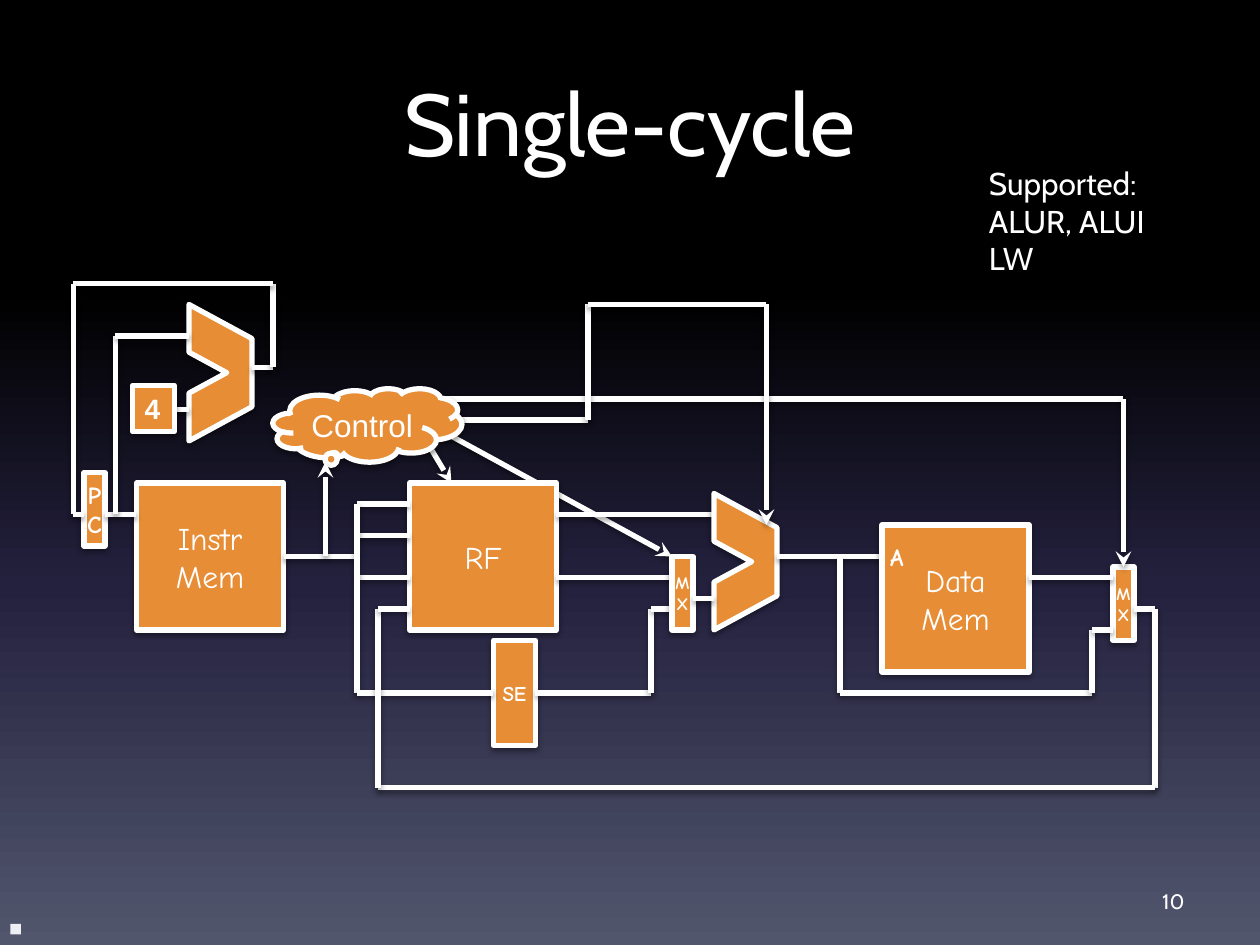
from copy import deepcopy

from pptx import Presentation, dml, oxml, util as u
from pptx.dml import color
from pptx.enum import shapes as es, text as et
from pptx.oxml import ns

WHITE, ORANGE = "FFFFFF", "E78D35"
COMIC, CABIN = "Comic Neue", "Cabin"
LEFT, MID, RIGHT = et.PP_ALIGN.LEFT, et.PP_ALIGN.CENTER, et.PP_ALIGN.RIGHT
RECT = es.MSO_SHAPE.RECTANGLE
SHADE = (
    f'<a:effectLst {ns.nsdecls("a")}><a:outerShdw blurRad="39370" dist="20320" '
    'dir="5400000" rotWithShape="0"><a:srgbClr val="000000"><a:alpha val="38000"/>'
    "</a:srgbClr></a:outerShdw></a:effectLst>"
)
ARROW = f'<a:tailEnd {ns.nsdecls("a")} type="stealth"/>'


def tint(code):
    """Turn a hex string into a colour."""
    return color.RGBColor.from_string(code)


def unit(count):
    """Turn grid steps, twelve to the inch, into a length."""
    return u.Cm(count * 2.54 / 12)


def place(box, x, y, w, h):
    """Give the lengths of a part set relative to the box."""
    return [unit(n) for n in (box[0] + x, box[1] + y, w, h)]


def edge(item):
    """Give a part the white outline and the soft shadow."""
    item.line.color.rgb = tint(WHITE)
    item.line.width = u.Pt(3)
    item._element.spPr.append(oxml.parse_xml(SHADE))


def write(item, words, size, face, align=MID, bold=False, anchor=et.MSO_ANCHOR.MIDDLE, wrap=False):
    """Put formatted words into a shape."""
    frame = item.text_frame
    frame.text = words
    frame.word_wrap = wrap
    frame.vertical_anchor = anchor
    for para in frame.paragraphs:
        para.alignment = align
        font = para.font
        font.size, font.name, font.bold = u.Pt(size), face, bold
        font.color.rgb = tint(WHITE)


def block(slide, box, spot, words, size=18, kind=RECT, **style):
    """Draw an orange labelled block."""
    item = slide.shapes.add_shape(kind, *place(box, *spot))
    item.fill.solid()
    item.fill.fore_color.rgb = tint(ORANGE)
    edge(item)
    write(item, words, size, **{"face": COMIC, **style})
    return item


def label(slide, box, spot, words, size, face=CABIN, **style):
    """Add a free text label."""
    item = slide.shapes.add_textbox(*place(box, *spot))
    write(item, words, size, face, **style)


def wire(slide, box, points, arrow=False, start=None, stop=None):
    """Draw a run of straight connectors, joined to blocks where given."""
    links = []
    for a, b in zip(points, points[1:]):
        ends = [unit(p[i] + box[i]) for p in (a, b) for i in (0, 1)]
        link = slide.shapes.add_connector(es.MSO_CONNECTOR.STRAIGHT, *ends)
        edge(link)
        links.append(link)
    if start:
        links[0].begin_connect(*start)
    if stop:
        links[-1].end_connect(*stop)
    if arrow:
        links[-1]._element.spPr.find(ns.qn("a:ln")).append(oxml.parse_xml(ARROW))


def alu(slide, box, x, y):
    """Draw a notched adder outline."""
    dots = [(0, 13), (6, 9.75), (6, 3.25), (0, 0), (0, 4.55), (3.6, 6.5), (0, 8.45)]
    spots = [(unit(box[0] + x + a), unit(box[1] + y + b)) for a, b in dots]
    pen = slide.shapes.build_freeform(*spots[0])
    pen.add_line_segments(spots[1:])
    item = pen.convert_to_shape()
    item.fill.solid()
    item.fill.fore_color.rgb = tint(ORANGE)
    edge(item)


def back(slide):
    """Paint the night sky gradient."""
    fill = slide.background.fill
    fill.gradient()
    fill.gradient_angle = 270
    rows = slide._element.find(".//" + ns.qn("a:gsLst"))
    for _ in range(2):
        rows.append(deepcopy(rows[0]))
    tones = [(0, "000000"), (0.31, "000000"), (0.62, "24213E"), (1, "51566D")]
    for stop, (pos, code) in zip(fill.gradient_stops, tones):
        stop.position = pos
        stop.color.rgb = tint(code)


def head(slide, box):
    """Set the title and the list of supported instructions."""
    item = slide.shapes.title
    item.left, item.top, item.width, item.height = place(box, 0, 0, 108, 15)
    write(item, "Single-cycle", 50, CABIN, anchor=et.MSO_ANCHOR.TOP, wrap=True)
    item.text_frame.auto_size = et.MSO_AUTO_SIZE.NONE
    label(slide, box, (87, 9, 18.7, 12.1), "Supported:\nALUR, ALUI\vLW", 18,
          align=LEFT, anchor=et.MSO_ANCHOR.TOP)


def control(slide, box):
    """Draw the control cloud and its outgoing signals."""
    wire(slide, box, [(16, 1), (81, 1)])
    wire(slide, box, [(15, 3), (30, 3)])
    wire(slide, box, [(16, 4), (38, 16)], arrow=True)
    wire(slide, box, [(14, 4), (17, 9)], arrow=True)
    cloud = block(slide, box, (0, 0, 18, 7), "Control", kind=es.MSO_SHAPE.CLOUD_CALLOUT,
                  face="Arial", align=LEFT, anchor=et.MSO_ANCHOR.TOP)
    cloud.adjustments[0], cloud.adjustments[1] = -0.177, 0.426


def fetch(slide, box):
    """Draw the program counter, its adder and the instruction memory."""
    mem = block(slide, box, (6, 19, 14, 14), "Instr\nMem")
    block(slide, box, (1, 18, 2, 7), "P\nC", 14, bold=True)
    alu(slide, box, 11, 2)
    wire(slide, box, [(3, 22), (6, 22)])
    wire(slide, box, [(4, 22), (4, 5), (11, 5)])
    wire(slide, box, [(8, 12), (11, 12)])
    wire(slide, box, [(17, 8), (19, 8), (19, 0), (0, 0), (0, 22), (1, 22)])
    wire(slide, box, [(20, 26), (27, 26)], start=(mem, 3))
    wire(slide, box, [(24, 26), (24, 17)], arrow=True)
    block(slide, box, (5.6, 9.7, 4, 4.4), "4", 16, face="Arial", align=LEFT,
          bold=True, anchor=et.MSO_ANCHOR.TOP)


def decode(slide, box):
    """Draw the register file and the sign extender."""
    block(slide, box, (5, 0, 14, 14), "RF")
    for y in (2, 5, 9):
        wire(slide, box, [(0, y), (5, y)])
    wire(slide, box, [(19, 3), (34, 3)])
    wire(slide, box, [(19, 9), (30, 9)])
    ext = block(slide, box, (13, 15, 4, 10), "SE", 12, bold=True)
    wire(slide, box, [(0, 2), (0, 20), (13, 20)], stop=(ext, 1))
    wire(slide, box, [(17, 20), (28, 20), (28, 12), (30, 12)], start=(ext, 3))


def compute(slide, box):
    """Draw the operand selector and the main adder."""
    alu(slide, box, 12, 18)
    block(slide, box, (8, 24, 2, 7), "M\nX", 10, bold=True)
    wire(slide, box, [(10, 28), (12, 28)])
    wire(slide, box, [(0, 11), (0, 0), (17, 0), (17, 21)], arrow=True)
    wire(slide, box, [(18, 24), (28, 24)])


def memory(slide, box):
    """Draw the data memory, its selector and the write-back path."""
    block(slide, box, (4, 12, 14, 14), "Data\nMem")
    label(slide, box, (3.6, 13, 4.2, 4.1), "A", 14, COMIC, align=LEFT, bold=True,
          anchor=et.MSO_ANCHOR.TOP)
    pick = block(slide, box, (26, 16, 2, 7), "M\nX", 10, bold=True)
    wire(slide, box, [(18, 17), (26, 17)])
    wire(slide, box, [(0, 15), (0, 28), (24, 28), (24, 22), (26, 22)])
    wire(slide, box, [(28, 20), (30, 20), (30, 37), (-44, 37), (-44, 20), (-41, 20)])
    wire(slide, box, [(27, 0), (27, 16)], arrow=True, stop=(pick, 0))


def foot(slide, box):
    """Set the slide number and the corner mark."""
    label(slide, box, (85, 0, 28, 4.8), "10", 12, align=RIGHT, wrap=True)
    mark = slide.shapes.add_shape(RECT, *place(box, 0, 4.6, 1, 1))
    mark.fill.solid()
    mark.fill.fore_color.rgb = tint("EEEFF4")
    mark.line.fill.background()
    mark.shadow.inherit = False


def main():
    """Build and save the slide."""
    deck = Presentation()
    deck.slide_width, deck.slide_height = u.Cm(25.4), u.Cm(19.05)
    slide = deck.slides.add_slide(deck.slide_layouts[5])
    back(slide)
    parts = [(head, (6, 6)), (control, (26, 37)), (fetch, (7, 27)), (decode, (34, 46)),
             (compute, (56, 29)), (memory, (80, 38)), (foot, (1, 83.4))]
    for draw, box in parts:
        draw(slide, box)
    deck.save("out.pptx")


if __name__ == "__main__":
    main()
